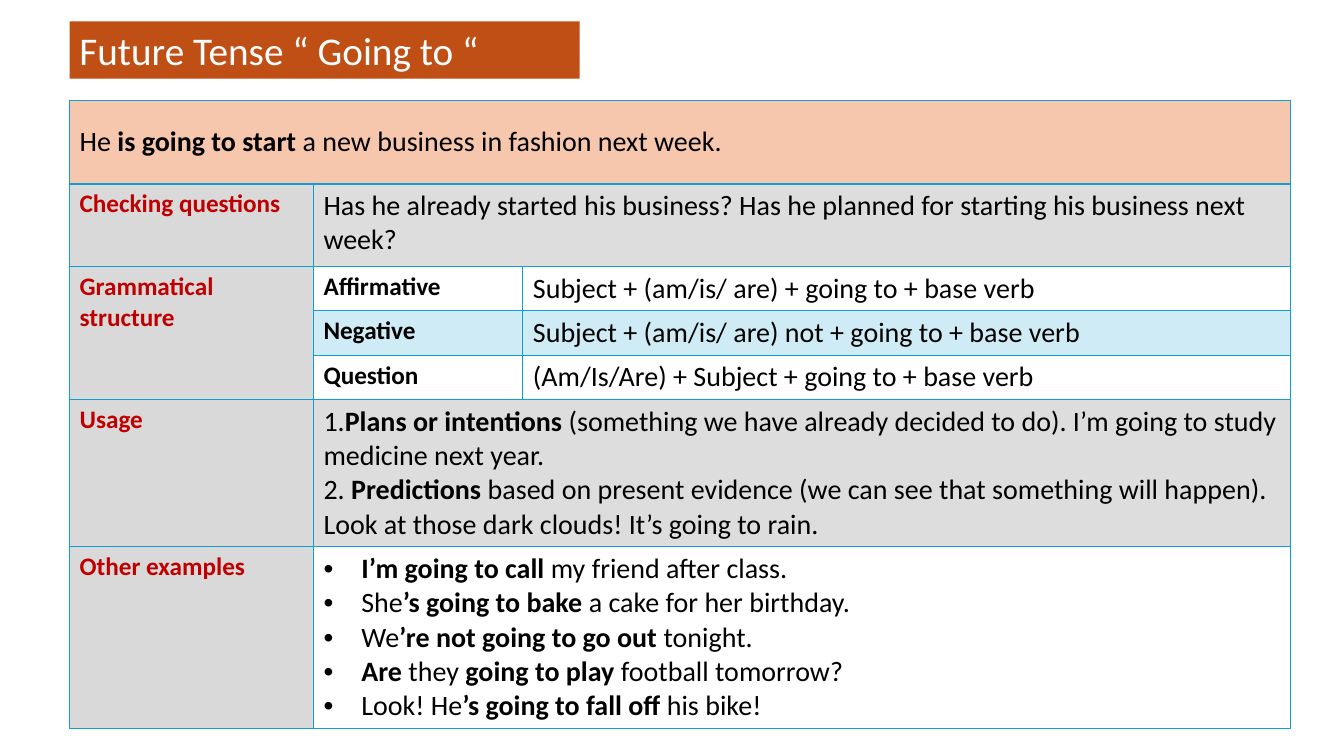
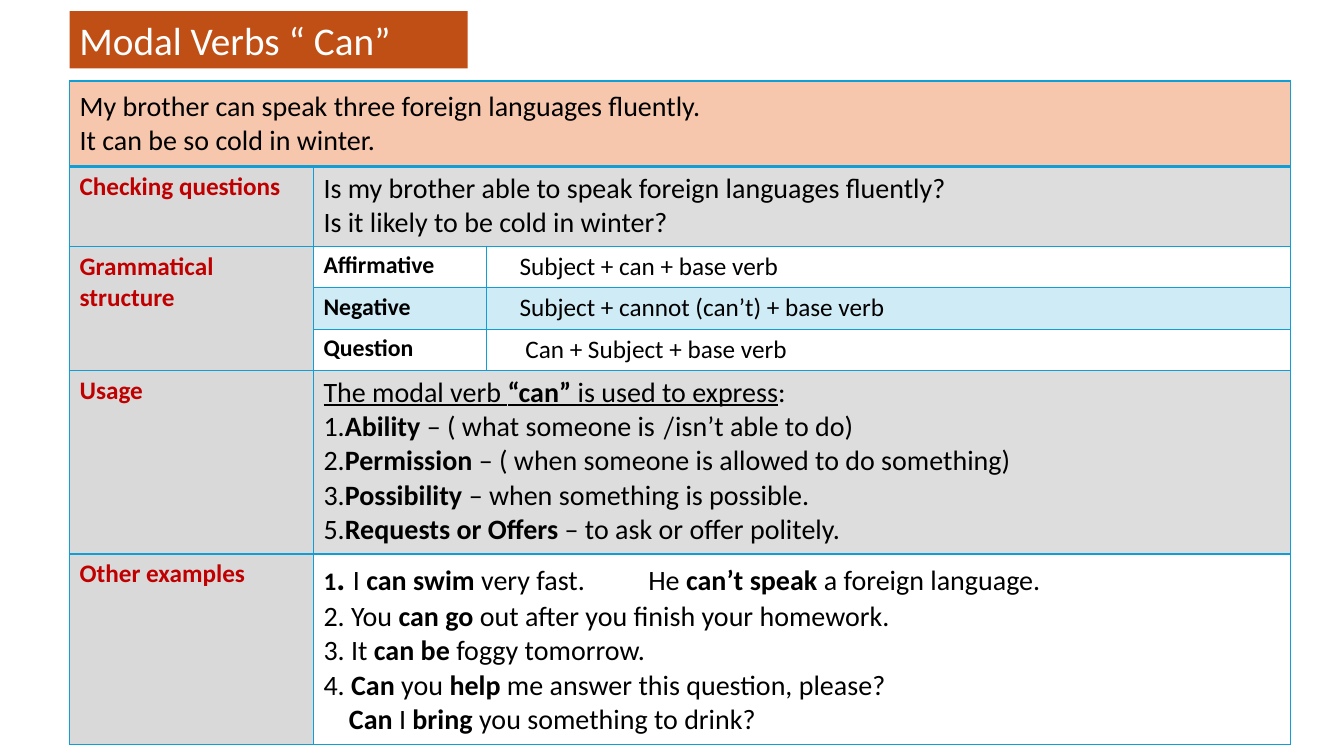
from dataclasses import dataclass, field

from lxml import etree
from pptx import Presentation
from pptx.dml.color import RGBColor
from pptx.enum.shapes import MSO_SHAPE
from pptx.enum.text import MSO_ANCHOR, PP_ALIGN
from pptx.oxml.ns import qn
from pptx.util import Pt

RECTANGLE = MSO_SHAPE.RECTANGLE
TOP, MIDDLE = MSO_ANCHOR.TOP, MSO_ANCHOR.MIDDLE
LEFT = PP_ALIGN.LEFT


@dataclass(frozen=True)
class Theme:
    font: str = "Calibri"
    slash_font: str = "Cambria"
    title_fill: str = "C04F15"
    title_ink: str = "FFFFFF"
    ink: str = "000000"
    heading_ink: str = "C00000"
    example_fill: str = "F6C6AD"
    heading_fill: str = "D9D9D9"
    shade: str = "595959"
    accent: str = "0F9ED5"
    tint: int = 20
    title_size: float = 28
    body_size: float = 20
    heading_size: float = 18
    accent_size: float = 24


THEME = Theme()
SLIDE_WIDTH, SLIDE_HEIGHT = 960, 540
GRID_LEFT, GRID_WIDTH, HEADING_WIDTH = 49.7, 871.9, 174.2
TITLE_HEIGHT = 41
BULLET_INDENT = 27
HEADINGS = {1: "Checking questions", 2: "Grammatical structure",
            5: "Usage", 6: "Other examples"}
FORMS = ["Affirmative", "Negative", "Question"]
FIRST_FORM_ROW = 2


@dataclass
class Run:
    text: str
    bold: bool = False
    underline: bool = False
    size: float = 0
    font: str = THEME.font


@dataclass
class Line:
    """A paragraph; text in *asterisks* is bold, or give the runs themselves."""
    content: str | list
    indent: float = 0
    bullet: bool = False
    tab: float = 0

    def runs(self):
        if isinstance(self.content, list):
            return self.content
        pieces = self.content.split("*")
        return [Run(text, bold=i % 2 == 1) for i, text in enumerate(pieces) if text]


@dataclass
class Lesson:
    title: str
    title_top: float
    title_width: float
    grid_top: float
    form_width: float
    row_heights: list
    sentences: list
    questions: list
    formulas: list
    usage: list
    examples: list
    form_size: float = THEME.heading_size
    formula_size: float = THEME.body_size
    formula_indents: list = field(default_factory=lambda: [0, 0, 0])


def bullets(*texts):
    return [Line(text, BULLET_INDENT, bullet=True) for text in texts]


def lines(*texts):
    return [Line(text) for text in texts]


GOING_TO = Lesson(
    title="Future Tense “ Going to “",
    title_top=15.3, title_width=364.3, grid_top=72, form_width=149.6,
    row_heights=[59.3, 59, 31.7, 31.7, 31.7, 105, 130],
    sentences=lines("He *is going to start *a new business in fashion next week."),
    questions=lines("Has he already started his business? "
                    "Has he planned for starting his business next week?"),
    formulas=["Subject + (am/is/ are) + going to + base verb",
              "Subject + (am/is/ are) not + going to + base verb",
              "(Am/Is/Are) + Subject + going to + base verb"],
    usage=lines(
        "1.*Plans or intentions *(something we have already decided to do). "
        "I’m going to study medicine next year.",
        "2. *Predictions* based on present evidence (we can see that something "
        "will happen). Look at those dark clouds! It’s going to rain."),
    examples=bullets(
        "*I’m going to call *my friend after class.",
        "She*’s going to bake *a cake for her birthday.",
        "We*’re not going to go out *tonight.",
        "*Are* they *going to play *football tomorrow?",
        "Look! He*’s going to fall off *his bike!"),
)

CAN = Lesson(
    title="Modal Verbs “ Can”",
    title_top=8, title_width=284.4, grid_top=57.8, form_width=123.8,
    row_heights=[61.2, 56.9, 29.6, 29.6, 29.6, 131, 136.1],
    sentences=lines("My brother can speak three foreign languages fluently.",
                    "It can be so cold in winter."),
    questions=lines("Is my brother able to speak foreign languages fluently?",
                    "Is it likely to be cold in winter?"),
    formulas=["Subject + can + base verb",
              "Subject + cannot (can’t) + base verb",
              "Can + Subject + base verb"],
    form_size=17, formula_size=18, formula_indents=[16.3, 16.3, 20.4],
    usage=[
        Line([Run("The modal verb ", underline=True),
              Run("“can” ", bold=True, underline=True),
              Run("is used to express", underline=True), Run(":")]),
        Line([Run("1."), Run("Ability ", bold=True), Run("– ( what someone is "),
              Run("/", font=THEME.slash_font), Run("isn’t able to do)")]),
        *lines("2.*Permission *– ( when someone is allowed to do something)",
               "3.*Possibility *– when something is possible.",
               "5.*Requests or Offers *– to ask or offer politely.")],
    examples=[
        Line([Run("1", bold=True, size=THEME.heading_size),
              Run(". ", bold=True, size=THEME.accent_size),
              Run("I "), Run("can swim", bold=True), Run(" very fast.\tHe "),
              Run("can’t speak", bold=True), Run(" a foreign language.")], tab=232),
        *lines("2. You *can go *out after you finish your homework.",
               "3. It *can be *foggy tomorrow.",
               "4. *Can* you *help* me answer this question, please?"),
        Line("*Can *I *bring *you something to drink?", indent=18.2)],
)


def set_font(font, size, color, name=THEME.font, bold=False):
    font.name, font.size, font.bold = name, Pt(size), bold
    font.color.rgb = RGBColor.from_string(color)


def set_paragraph_layout(paragraph, line):
    properties = paragraph._p.get_or_add_pPr()
    if line.indent:
        properties.set("marL", str(Pt(line.indent)))
    if line.bullet:
        properties.set("indent", str(-Pt(line.indent)))
        etree.SubElement(properties, qn("a:buFont"), typeface="Arial")
        etree.SubElement(properties, qn("a:buChar"), char="•")
    if line.tab:
        stops = etree.SubElement(properties, qn("a:tabLst"))
        etree.SubElement(stops, qn("a:tab"), pos=str(Pt(line.tab)), algn="l")


def write_lines(frame, content, size, color=THEME.ink):
    for number, line in enumerate(content):
        paragraph = frame.add_paragraph() if number else frame.paragraphs[0]
        paragraph.alignment = LEFT
        set_paragraph_layout(paragraph, line)
        for part in line.runs():
            run = paragraph.add_run()
            run.text = part.text
            set_font(run.font, part.size or size, color, part.font, part.bold)
            if part.underline:
                run.font.underline = True


def fill_cell(cell, color, tint=100):
    cell.fill.solid()
    cell.fill.fore_color.rgb = RGBColor.from_string(color)
    if tint < 100:
        color_node = cell._tc.tcPr.find(qn("a:solidFill"))[0]
        etree.SubElement(color_node, qn("a:alpha"), val=str(tint * 1000))


def set_borders(cell, top=1, bottom=1):
    properties = cell._tc.get_or_add_tcPr()
    for side, width in {"L": 1, "R": 1, "T": top, "B": bottom}.items():
        border = etree.SubElement(properties, qn(f"a:ln{side}"), w=str(Pt(width)))
        solid = etree.SubElement(border, qn("a:solidFill"))
        etree.SubElement(solid, qn("a:srgbClr"), val=THEME.accent)


def add_title(slide, lesson):
    banner = slide.shapes.add_shape(
        RECTANGLE, Pt(GRID_LEFT), Pt(lesson.title_top),
        Pt(lesson.title_width), Pt(TITLE_HEIGHT))
    banner.shadow.inherit = False
    banner.fill.solid()
    banner.fill.fore_color.rgb = RGBColor.from_string(THEME.title_fill)
    banner.line.fill.background()
    frame = banner.text_frame
    frame.word_wrap = True
    frame.vertical_anchor = TOP
    write_lines(frame, lines(lesson.title), THEME.title_size, THEME.title_ink)


def add_grid(slide, lesson):
    """Add the bordered table with its merged cells, still without text."""
    row_count = len(lesson.row_heights)
    table = slide.shapes.add_table(
        row_count, 3, Pt(GRID_LEFT), Pt(lesson.grid_top),
        Pt(GRID_WIDTH), Pt(sum(lesson.row_heights))).table
    table.first_row = table.horz_banding = False
    widths = [HEADING_WIDTH, lesson.form_width,
              GRID_WIDTH - HEADING_WIDTH - lesson.form_width]
    for column, width in zip(table.columns, widths):
        column.width = Pt(width)
    for number, height in enumerate(lesson.row_heights):
        table.rows[number].height = Pt(height)
        for cell in table.rows[number].cells:
            set_borders(cell, top=2 if number == 1 else 1,
                        bottom=2 if number == 0 else 1)
            cell.fill.background()
    table.cell(0, 0).merge(table.cell(0, 2))
    for row in (1, 5, 6):
        table.cell(row, 1).merge(table.cell(row, 2))
    last_form_row = FIRST_FORM_ROW + len(FORMS) - 1
    table.cell(FIRST_FORM_ROW, 0).merge(table.cell(last_form_row, 0))
    return table


def fill_forms(table, lesson):
    rows = zip(FORMS, lesson.formulas, lesson.formula_indents)
    for row, (form, formula, indent) in enumerate(rows, FIRST_FORM_ROW):
        form_cell, formula_cell = table.cell(row, 1), table.cell(row, 2)
        write_lines(form_cell.text_frame, lines(f"*{form}*"), lesson.form_size)
        write_lines(formula_cell.text_frame, [Line(formula, indent)],
                    lesson.formula_size)
        if form == "Negative":
            for cell in (form_cell, formula_cell):
                fill_cell(cell, THEME.accent, THEME.tint)


def add_lesson(deck, lesson):
    slide = deck.slides.add_slide(deck.slide_layouts[6])
    table = add_grid(slide, lesson)
    sentence_cell = table.cell(0, 0)
    sentence_cell.vertical_anchor = MIDDLE
    fill_cell(sentence_cell, THEME.example_fill)
    write_lines(sentence_cell.text_frame, lesson.sentences, THEME.body_size)
    for row, heading in HEADINGS.items():
        cell = table.cell(row, 0)
        fill_cell(cell, THEME.heading_fill)
        write_lines(cell.text_frame, lines(f"*{heading}*"),
                    THEME.heading_size, THEME.heading_ink)
    bodies = {1: lesson.questions, 5: lesson.usage, 6: lesson.examples}
    for row, body in bodies.items():
        write_lines(table.cell(row, 1).text_frame, body, THEME.body_size)
    for row in (1, 5):
        fill_cell(table.cell(row, 1), THEME.shade, THEME.tint)
    fill_forms(table, lesson)
    add_title(slide, lesson)


def main():
    deck = Presentation()
    deck.slide_width, deck.slide_height = Pt(SLIDE_WIDTH), Pt(SLIDE_HEIGHT)
    for lesson in (GOING_TO, CAN):
        add_lesson(deck, lesson)
    deck.save("out.pptx")


if __name__ == "__main__":
    main()
